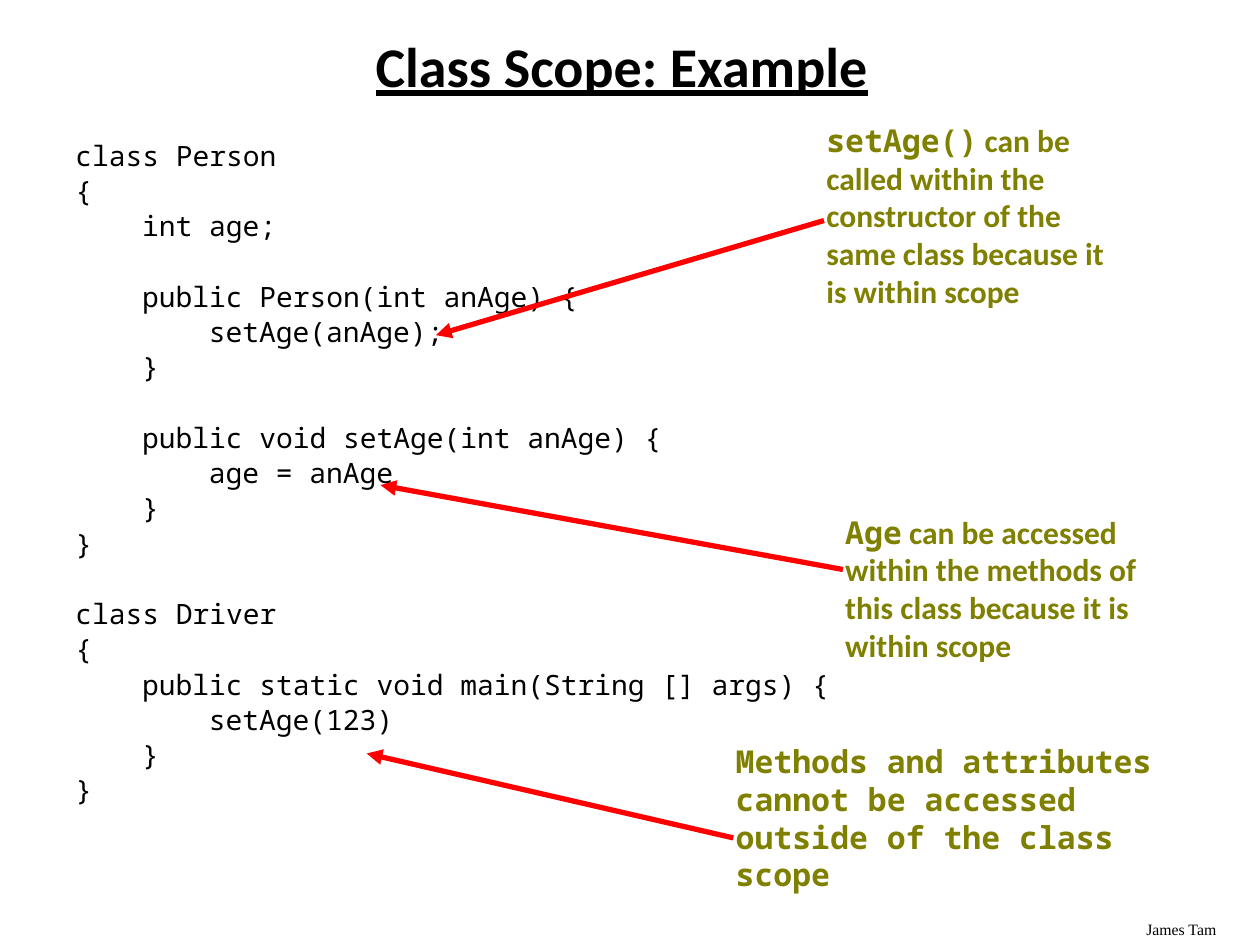
from lxml import etree
from pptx import Presentation
from pptx import util as u
from pptx.dml.color import RGBColor
from pptx.enum import shapes, text
from pptx.oxml import ns

COLORS = {"ink": "000000", "note": "808000", "arrow": "FF0000"}
SANS, MONO, SERIF = "Calibri", "Noto Sans Mono", "Times New Roman"
INDENT = 0.53
CODE_SPACE = 4.8
BLANK_LINE = 20.1

CODE_BLOCKS = [
    [(0, "class Person"), (0, "{"), (1, "int age;")],
    [(1, "public Person(int anAge) {"), (2, "setAge(anAge);"), (1, "}")],
    [(1, "public void setAge(int anAge) {"), (2, "age = anAge"), (1, "}"), (0, "}")],
    [(0, "class Driver"), (0, "{"), (1, "public static void main(String [] args) {"),
     (2, "setAge(123)"), (1, "}"), (0, "}")],
]

CALLOUTS = [
    ((6.46, 0.91, 2.58, 1.6), (6.54, 1.75), (3.46, 2.66),
     [("setAge()", MONO),
      (" can be called within the constructor of the same class because it is within scope", SANS)]),
    ((5.74, 5.84, 3.67, 1.3), (5.82, 6.65), (2.91, 5.98),
     [("Methods and attributes cannot be accessed outside of the class scope", MONO)]),
    ((6.61, 4.02, 2.58, 1.3), (6.69, 4.52), (3.02, 3.85),
     [("Age", MONO),
      (" can be accessed within the methods of this class because it is within scope", SANS)]),
]


def add_text_frame(slide, box):
    frame = slide.shapes.add_textbox(*map(u.Inches, box)).text_frame
    frame.word_wrap = True
    return frame


def add_run(paragraph, content, font, size, color="ink", bold=False, underline=False):
    run = paragraph.add_run()
    run.text = content
    run.font.name = font
    run.font.size = u.Pt(size)
    run.font.bold = bold
    run.font.underline = underline
    run.font.color.rgb = RGBColor.from_string(COLORS[color])


def add_title(slide, content):
    frame = add_text_frame(slide, (0.47, 0.2, 8.93, 0.7))
    frame.vertical_anchor = text.MSO_ANCHOR.MIDDLE
    paragraph = frame.paragraphs[0]
    paragraph.alignment = text.PP_ALIGN.CENTER
    paragraph.line_spacing = 0.9
    add_run(paragraph, content, SANS, 32, bold=True, underline=True)


def add_code(slide, blocks):
    frame = add_text_frame(slide, (0.5, 1.1, 8.94, 5.98))
    for block_index, block in enumerate(blocks):
        for line_index, (level, content) in enumerate(block):
            first = block_index == line_index == 0
            paragraph = frame.paragraphs[0] if first else frame.add_paragraph()
            paragraph.line_spacing = 0.8
            if not first:
                gap = BLANK_LINE if line_index == 0 else 0
                paragraph.space_before = u.Pt(CODE_SPACE + gap)
            properties = paragraph._p.get_or_add_pPr()
            properties.set("marL", str(u.Inches(level * INDENT)))
            add_run(paragraph, content, MONO, 16)


def add_arrow(slide, start, end):
    arrow = slide.shapes.add_connector(
        shapes.MSO_CONNECTOR.STRAIGHT, *map(u.Inches, start + end))
    arrow.line.color.rgb = RGBColor.from_string(COLORS["arrow"])
    arrow.line.width = u.Pt(3)
    etree.SubElement(arrow.line._get_or_add_ln(), ns.qn("a:tailEnd"), type="triangle")
    etree.SubElement(arrow._element.spPr, ns.qn("a:effectLst"))


def add_callout(slide, box, start, end, pieces):
    add_arrow(slide, start, end)
    paragraph = add_text_frame(slide, box).paragraphs[0]
    for content, font in pieces:
        add_run(paragraph, content, font, 18, "note", bold=True)


def add_author(slide, name):
    frame = add_text_frame(slide, (9, 7.25, 1, 0.25))
    add_run(frame.paragraphs[0], name, SERIF, 9)


def main():
    presentation = Presentation()
    presentation.slide_width = u.Inches(10)
    presentation.slide_height = u.Inches(7.5)
    slide = presentation.slides.add_slide(presentation.slide_layouts[6])
    add_author(slide, "James Tam")
    add_title(slide, "Class Scope: Example")
    add_code(slide, CODE_BLOCKS)
    for callout in CALLOUTS:
        add_callout(slide, *callout)
    presentation.save("out.pptx")


if __name__ == "__main__":
    main()
